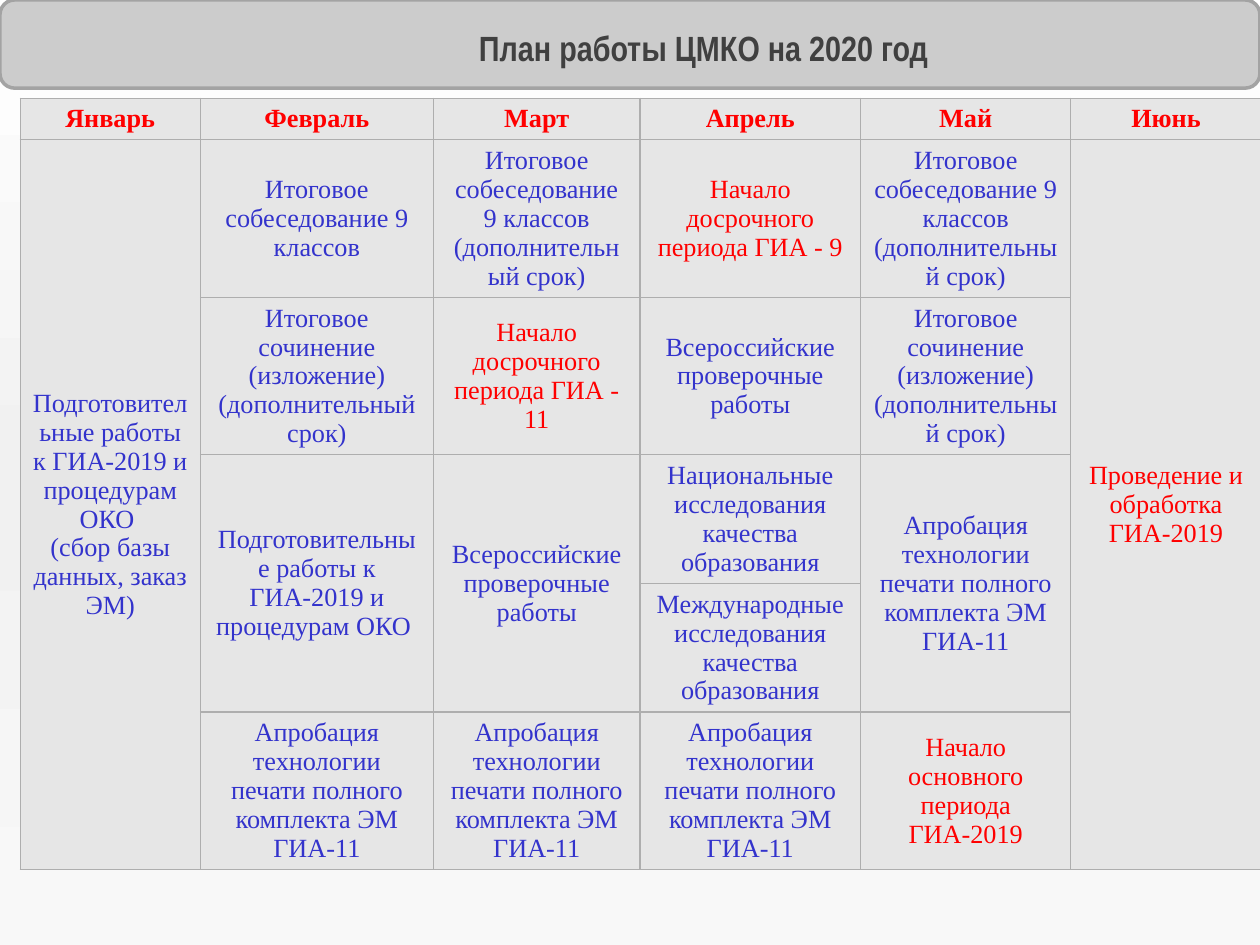
"""Build the January to June work plan slide."""
from lxml.etree import SubElement
from pptx import Presentation
from pptx.dml.color import RGBColor
from pptx.enum.shapes import MSO_SHAPE
from pptx.enum.text import MSO_ANCHOR, PP_ALIGN
from pptx.oxml import parse_xml
from pptx.oxml.ns import nsdecls, qn
from pptx.util import Inches, Pt

RED = RGBColor(0xFF, 0x00, 0x00)
BLUE = RGBColor(0x33, 0x33, 0xCC)
DARK = RGBColor(0x40, 0x40, 0x40)
BANNER = RGBColor(0xCC, 0xCC, 0xCC)
BANNER_EDGE = RGBColor(0xA3, 0xA3, 0xA3)
CELL = RGBColor(0xE6, 0xE6, 0xE6)
GRID = RGBColor(0xAE, 0xAE, 0xAE)
BACKGROUND = [
    (0, RGBColor(0xFF, 0xFF, 0xFF)),
    (50, RGBColor(0xF1, 0xF1, 0xF1)),
    (100, RGBColor(0xF8, 0xF8, 0xF8)),
]

COLUMNS = [1.43, 1.85, 1.64, 1.75, 1.67, 1.51]
ROWS = [0.33, 1.25, 1.25, 1.02, 1.02, 1.25]
MONTHS = ["Январь", "Февраль", "Март", "Апрель", "Май", "Июнь"]

PREPARATION = "Подготовительные работы к ГИА-2019 и процедурам ОКО "
INTERVIEW = "Итоговое собеседование 9 классов"
EXTRA = " (дополнительный срок)"
ESSAY = "Итоговое сочинение (изложение)" + EXTRA
CHECKS = "Всероссийские проверочные работы"
TRIAL = "Апробация технологии печати полного комплекта ЭМ ГИА-11"

PLAN = [
    [(PREPARATION + "\n(сбор базы данных, заказ ЭМ)", BLUE, 5)],
    [(INTERVIEW, BLUE, 1), (ESSAY, BLUE, 1), (PREPARATION, BLUE, 2), (TRIAL, BLUE, 1)],
    [(INTERVIEW + EXTRA, BLUE, 1), ("Начало досрочного периода ГИА - 11", RED, 1),
     (CHECKS, BLUE, 2), (TRIAL, BLUE, 1)],
    [("Начало досрочного периода ГИА - 9", RED, 1), (CHECKS, BLUE, 1),
     ("Национальные исследования качества образования", BLUE, 1),
     ("Международные исследования качества образования", BLUE, 1), (TRIAL, BLUE, 1)],
    [(INTERVIEW + EXTRA, BLUE, 1), (ESSAY, BLUE, 1), (TRIAL, BLUE, 2),
     ("Начало основного периода ГИА-2019", RED, 1)],
    [("Проведение и обработка ГИА-2019", RED, 5)],
]


def write_text(frame, text, *, font, size, color, bold=False, align=PP_ALIGN.CENTER):
    """Fill a text frame, one paragraph for each line of text."""
    for number, line in enumerate(text.split("\n")):
        para = frame.add_paragraph() if number else frame.paragraphs[0]
        para.alignment = align
        span = para.add_run()
        span.text = line
        span.font.name = font
        span.font.size = Pt(size)
        span.font.bold = bold
        span.font.color.rgb = color


class SlideBuilder:
    """Hold the fonts and the current slide."""

    title_font = "Arial Narrow"
    table_font = "Times New Roman"
    table_size = 15

    def __init__(self, slide):
        """Keep the slide to draw on."""
        self.slide = slide

    def background(self, stops):
        """Paint a vertical gradient behind the slide."""
        fill = self.slide.background.fill
        fill.solid()
        properties = self.slide.background._cSld.bg.bgPr
        gradient = parse_xml(
            f'<a:gradFill {nsdecls("a")} rotWithShape="1"><a:gsLst/>'
            '<a:lin ang="5400000" scaled="0"/></a:gradFill>'
        )
        for position, color in stops:
            stop = SubElement(gradient[0], qn("a:gs"), pos=str(position * 1000))
            SubElement(stop, qn("a:srgbClr"), val=str(color))
        properties.replace(properties.find(qn("a:solidFill")), gradient)

    def banner(self, left, top, width, height):
        """Draw the rounded bar behind the title."""
        bar = self.slide.shapes.add_shape(
            MSO_SHAPE.ROUNDED_RECTANGLE,
            Inches(left), Inches(top), Inches(width), Inches(height),
        )
        bar.shadow.inherit = False
        bar.fill.solid()
        bar.fill.fore_color.rgb = BANNER
        bar.line.color.rgb = BANNER_EDGE
        bar.line.width = Pt(2)

    def title(self, text, left, top, width, height):
        """Place the title in front of the shapes drawn so far."""
        box = self.slide.shapes.title
        box.left, box.top = Inches(left), Inches(top)
        box.width, box.height = Inches(width), Inches(height)
        box.text_frame.word_wrap = True
        box.text_frame.vertical_anchor = MSO_ANCHOR.MIDDLE
        write_text(box.text_frame, text, font=self.title_font, size=20, color=DARK, bold=True)
        self.slide.shapes._spTree.append(box._element)

    def style_cell(self, cell):
        """Give a cell its fill, anchor and borders."""
        cell.fill.solid()
        cell.fill.fore_color.rgb = CELL
        cell.vertical_anchor = MSO_ANCHOR.MIDDLE
        properties = cell._tc.get_or_add_tcPr()
        for index, side in enumerate(("lnL", "lnR", "lnT", "lnB")):
            properties.insert(index, parse_xml(
                f'<a:{side} {nsdecls("a")} w="{Pt(0.75)}"><a:solidFill>'
                f'<a:srgbClr val="{GRID}"/></a:solidFill></a:{side}>'
            ))

    def plan_table(self, left, top, months, plan):
        """Draw the month columns, joining rows where an entry spans several."""
        table = self.slide.shapes.add_table(
            len(ROWS), len(COLUMNS), Inches(left), Inches(top),
            Inches(sum(COLUMNS)), Inches(sum(ROWS)),
        ).table
        table.horz_banding = False
        for column, width in zip(table.columns, COLUMNS):
            column.width = Inches(width)
        for row, height in zip(table.rows, ROWS):
            row.height = Inches(height)
        for cell in table.iter_cells():
            self.style_cell(cell)
        for column, (month, entries) in enumerate(zip(months, plan)):
            row = 0
            for text, color, rows in [(month, RED, 1)] + entries:
                cell = table.cell(row, column)
                if rows > 1:
                    cell.merge(table.cell(row + rows - 1, column))
                write_text(cell.text_frame, text, font=self.table_font,
                           size=self.table_size, color=color, bold=row == 0)
                row += rows


def main():
    """Create the deck and save it."""
    deck = Presentation()
    deck.slide_width, deck.slide_height = Inches(10), Inches(7.5)
    page = SlideBuilder(deck.slides.add_slide(deck.slide_layouts[5]))
    page.background(BACKGROUND)
    page.plan_table(0.16, 0.78, MONTHS, PLAN)
    page.banner(0, 0, 10, 0.7)
    page.title("План работы ЦМКО на 2020 год", 1.56, 0.16, 8.05, 0.44)
    deck.save("out.pptx")


if __name__ == "__main__":
    main()
